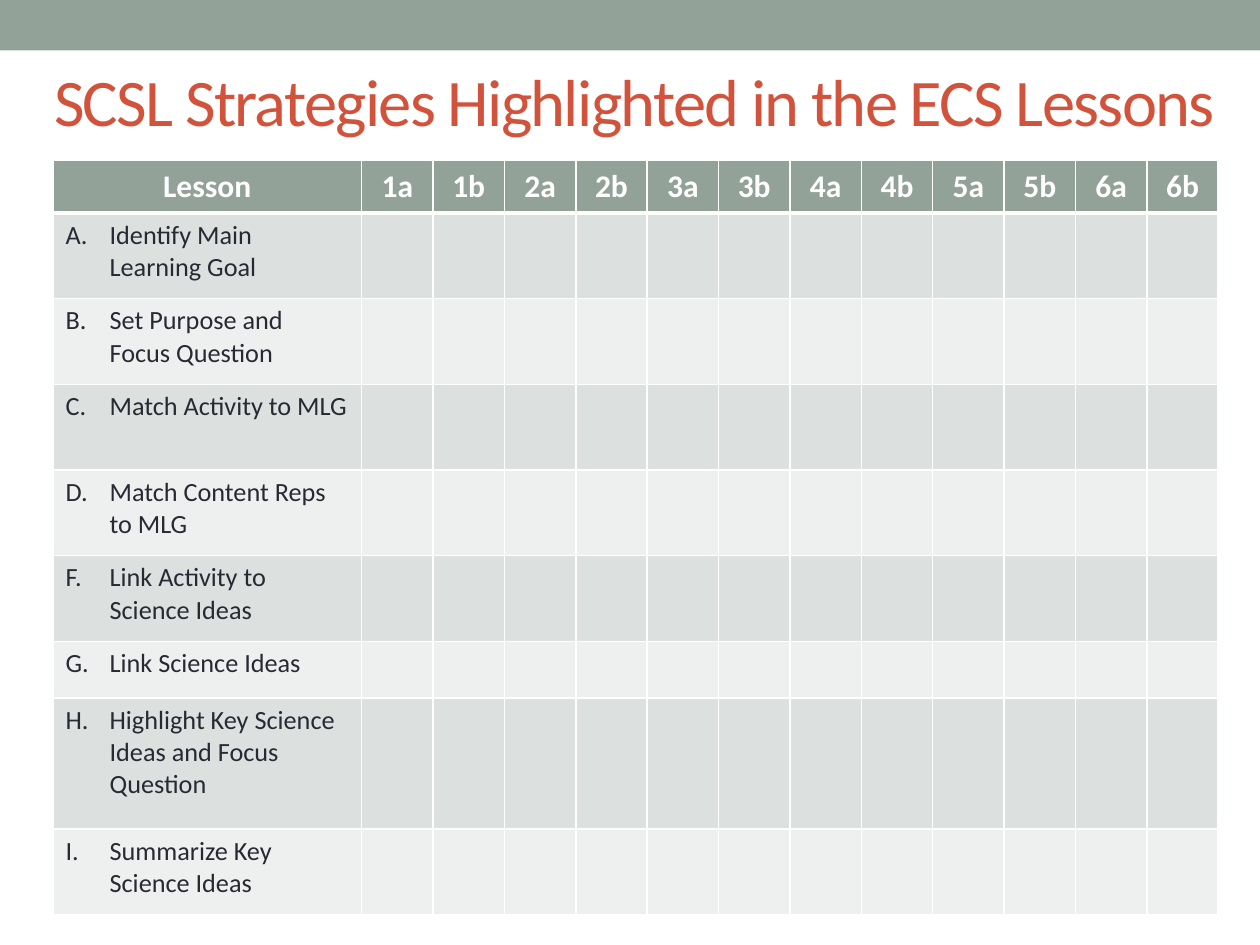
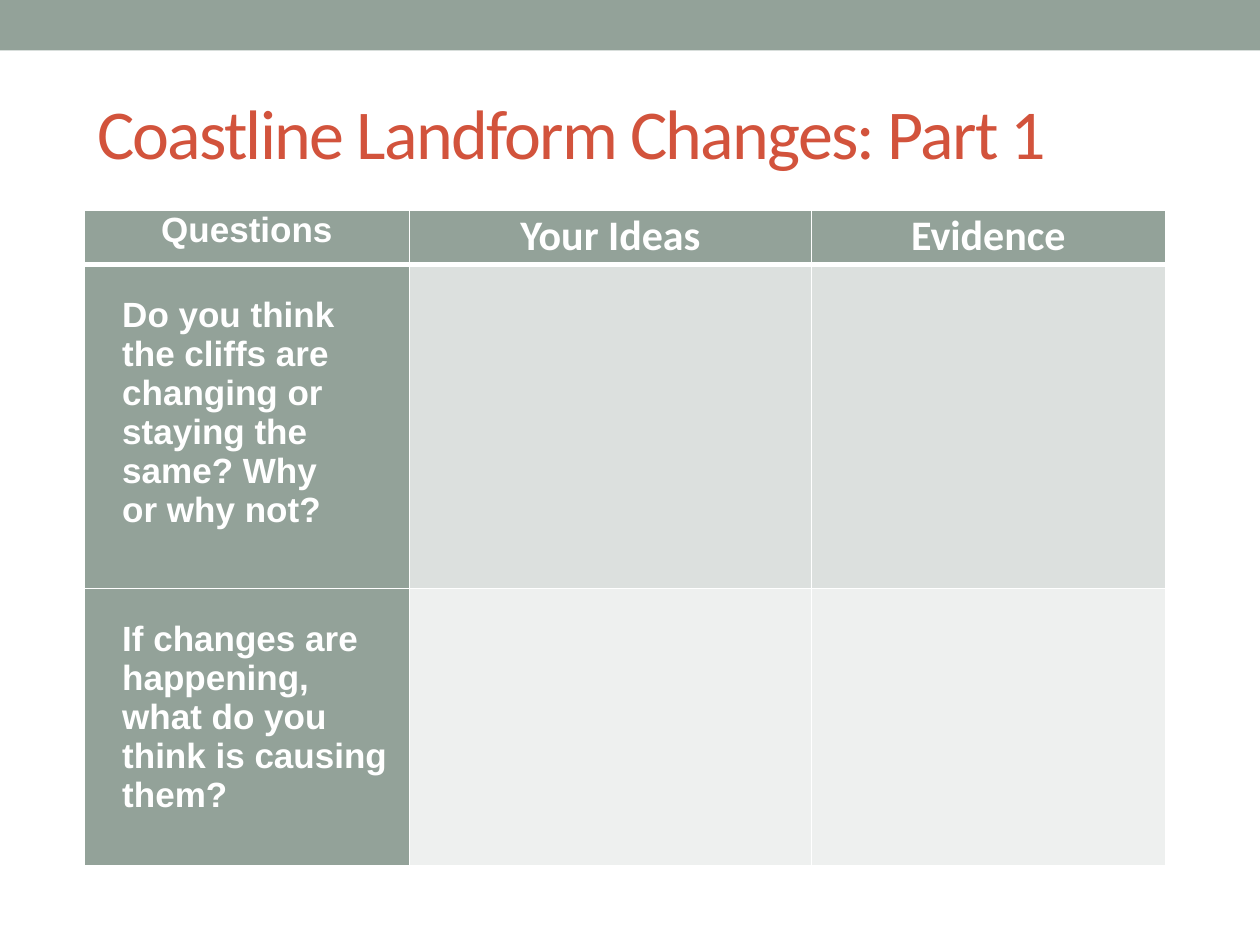
from dataclasses import dataclass

from lxml import etree
from pptx import Presentation
from pptx.dml.color import RGBColor
from pptx.enum import shapes, text
from pptx.oxml import ns
from pptx.util import Inches, Pt


@dataclass(frozen=True)
class Theme:
    sage: str = "93A299"
    red: str = "D2533C"
    ink: str = "292934"
    white: str = "FFFFFF"
    stripes: tuple = ("DCE0DE", "EEF0EF")
    sans: str = "Calibri"
    plain: str = "Arial"
    label_size: int = 15
    header_size: int = 18
    question_size: int = 20
    column_size: int = 24


THEME = Theme()
SLIDE_SIZE = (10, 7.5)
BAND_HEIGHT = 0.4

# Content
STRATEGIES_TITLE = "SCSL Strategies Highlighted in the ECS Lessons"
LESSONS = [f"{number}{part}" for number in range(1, 7) for part in "ab"]
STRATEGIES = [  # letter, strategy, row height
    ("A.", "Identify Main Learning Goal", 0.68),
    ("B.", "Set Purpose and Focus Question", 0.68),
    ("C.", "Match Activity to MLG", 0.68),
    ("D.", "Match Content Reps to MLG", 0.68),
    ("F.", "Link Activity to Science Ideas", 0.68),
    ("G.", "Link Science Ideas", 0.45),
    ("H.", "Highlight Key Science Ideas and Focus Question", 1.04),
    ("I.", "Summarize Key Science Ideas", 0.68),
]
COASTLINE_TITLE = "Coastline Landform Changes: Part 1"
COASTLINE_HEADERS = [  # text, font, size
    ("Questions", THEME.plain, THEME.question_size),
    ("Your Ideas", THEME.sans, THEME.column_size),
    ("Evidence", THEME.sans, THEME.column_size),
]
QUESTIONS = [  # question, row height
    ("Do you think\vthe cliffs are changing or staying the same? Why\vor why not?", 2.57),
    ("If changes are happening, what do you think is causing them?", 2.2),
]


# Shared helpers
def rgb(value):
    return RGBColor.from_string(value)


def style_para(para, font, size, color, bold=False):
    para.font.name, para.font.size, para.font.bold = font, Pt(size), bold
    para.font.color.rgb = rgb(color)


def add_page(deck, title, box, size):
    """Add a slide with the top band and a placed title."""
    page = deck.slides.add_slide(deck.slide_layouts[5])
    band = page.shapes.add_shape(shapes.MSO_SHAPE.RECTANGLE, 0, 0,
                                 deck.slide_width, Inches(BAND_HEIGHT))
    band.shadow.inherit = False
    band.fill.solid()
    band.fill.fore_color.rgb = rgb(THEME.sage)
    band.line.fill.background()

    heading = page.shapes.title
    heading.left, heading.top, heading.width, heading.height = map(Inches, box)
    frame = heading.text_frame
    frame.text = title
    frame.auto_size = text.MSO_AUTO_SIZE.NONE
    frame.vertical_anchor = text.MSO_ANCHOR.MIDDLE
    frame.margin_right = 0
    para = frame.paragraphs[0]
    para.alignment = text.PP_ALIGN.LEFT
    style_para(para, THEME.sans, size, THEME.red)
    para.runs[0].font._element.set("spc", "-100") if hasattr(
        para.runs[0].font, "_element") else para.runs[0]._r.get_or_add_rPr().set("spc", "-100")
    return page


def set_borders(cell, bottom):
    """White lines, one point wide except for the bottom edge."""
    props = cell._tc.get_or_add_tcPr()
    for place, (edge, width) in enumerate([("lnL", 1), ("lnR", 1), ("lnT", 1), ("lnB", bottom)]):
        line = etree.Element(ns.qn(f"a:{edge}"), w=str(Pt(width)))
        fill = etree.SubElement(line, ns.qn("a:solidFill"))
        etree.SubElement(fill, ns.qn("a:srgbClr"), val=THEME.white)
        props.insert(place, line)


def add_grid(page, left, top, widths, heights, sage_column=False):
    """Add a table with a sage header row and striped body rows."""
    table = page.shapes.add_table(len(heights), len(widths), Inches(left), Inches(top),
                                  Inches(sum(widths)), Inches(sum(heights))).table
    for column, width in zip(table.columns, widths):
        column.width = Inches(width)
    for index, (row, height) in enumerate(zip(table.rows, heights)):
        row.height = Inches(height)
        for number, cell in enumerate(row.cells):
            is_sage = index == 0 or (sage_column and number == 0)
            cell.fill.solid()
            cell.fill.fore_color.rgb = rgb(THEME.sage if is_sage else THEME.stripes[(index - 1) % 2])
            set_borders(cell, bottom=3 if index == 0 else 1)
    return table


def write_header(cell, label, font, size):
    cell.text = label
    para = cell.text_frame.paragraphs[0]
    para.alignment = text.PP_ALIGN.CENTER
    style_para(para, font, size, THEME.white, bold=True)


def set_indent(para, margin, first_line=0, tab=None):
    props = para._p.get_or_add_pPr()
    props.set("marL", str(Inches(margin)))
    props.set("indent", str(Inches(first_line)))
    if tab:
        tabs = etree.SubElement(props, ns.qn("a:tabLst"))
        etree.SubElement(tabs, ns.qn("a:tab"), pos=str(Inches(tab)), algn="l")


def set_margins(cell, side, end):
    cell.margin_left = cell.margin_right = Inches(side)
    cell.margin_top = cell.margin_bottom = Inches(end)


# Slides
def add_strategies(deck):
    page = add_page(deck, STRATEGIES_TITLE, (0.33, 0.25, 9.42, 1.08), 38)
    grid_width, label_width = 9.25, 2.45
    lesson_width = (grid_width - label_width) / len(LESSONS)
    table = add_grid(page, 0.42, 1.27, [label_width] + [lesson_width] * len(LESSONS),
                     [0.42] + [height for _, _, height in STRATEGIES])
    for number, label in enumerate(["Lesson"] + LESSONS):
        cell = table.cell(0, number)
        cell.vertical_anchor = text.MSO_ANCHOR.MIDDLE
        write_header(cell, label, THEME.sans, THEME.header_size)
    for index, (letter, strategy, _) in enumerate(STRATEGIES, start=1):
        cell = table.cell(index, 0)
        cell.text = f"{letter}\t{strategy}"
        para = cell.text_frame.paragraphs[0]
        set_indent(para, 0.35, -0.35, tab=0.31)
        style_para(para, THEME.sans, THEME.label_size, THEME.ink)


def add_coastline(deck):
    page = add_page(deck, COASTLINE_TITLE, (0.67, 0.67, 8.58, 0.75), 40)
    table = add_grid(page, 0.67, 1.67, [2.58, 3.19, 2.81],
                     [0.43] + [height for _, height in QUESTIONS], sage_column=True)
    for number, header in enumerate(COASTLINE_HEADERS):
        cell = table.cell(0, number)
        set_margins(cell, 0.07, 0)
        write_header(cell, *header)
    for index, (question, _) in enumerate(QUESTIONS, start=1):
        cell = table.cell(index, 0)
        set_margins(cell, 0.15, 0.25)
        cell.text = question
        para = cell.text_frame.paragraphs[0]
        set_indent(para, 0.15)
        style_para(para, THEME.plain, THEME.question_size, THEME.white, bold=True)


def main():
    deck = Presentation()
    deck.slide_width, deck.slide_height = map(Inches, SLIDE_SIZE)
    add_strategies(deck)
    add_coastline(deck)
    deck.save("out.pptx")


if __name__ == "__main__":
    main()
